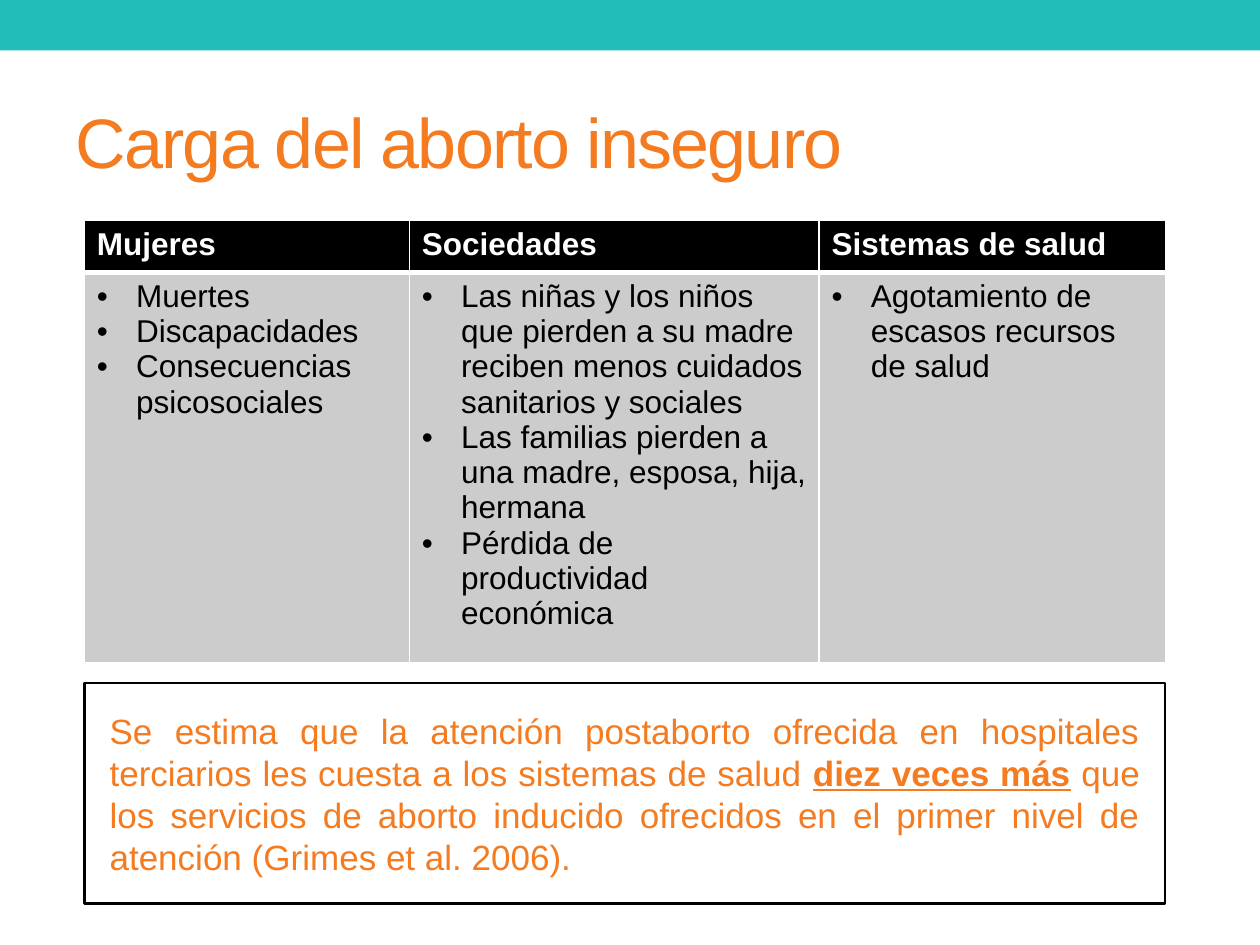
from dataclasses import dataclass

from lxml.etree import SubElement
from pptx import Presentation
from pptx.dml.color import RGBColor
from pptx.enum.shapes import MSO_SHAPE
from pptx.enum.text import MSO_ANCHOR, PP_ALIGN
from pptx.oxml.ns import qn
from pptx.util import Cm, Pt

FONT = "Arial"
TEAL, ORANGE, GREY = "22BCB9", "F47B20", "CCCCCC"
BLACK, WHITE = "000000", "FFFFFF"
LEFT, WIDTH = Cm(1.7), Cm(21.79)
HEAD, BODY = Cm(1.04), Cm(7.37)


@dataclass
class Column:
    width: float
    head: str
    items: list[str]


COLUMNS = [
    Column(6.55, "Mujeres",
           ["Muertes", "Discapacidades", "Consecuencias psicosociales"]),
    Column(8.26, "Sociedades", [
        "Las niñas y los niños que pierden a su madre reciben menos "
        "cuidados sanitarios y sociales",
        "Las familias pierden a una madre, esposa, hija, hermana",
        "Pérdida de productividad económica",
    ]),
    Column(6.98, "Sistemas de salud",
           ["Agotamiento de escasos recursos de salud"]),
]


def tint(code: str) -> RGBColor:
    return RGBColor.from_string(code)


def style(run, size: float, color: str, bold: bool = False) -> None:
    font = run.font
    font.name, font.size, font.bold = FONT, Pt(size), bold
    font.color.rgb = tint(color)


def bullet(para) -> None:
    props = para._p.get_or_add_pPr()
    props.set("marL", str(Cm(0.79)))
    props.set("indent", str(-Cm(0.79)))
    SubElement(props, qn("a:buFont"), typeface=FONT)
    SubElement(props, qn("a:buChar"), char="•")


def border(cell, top: float, bottom: float) -> None:
    props = cell._tc.get_or_add_tcPr()
    for side, width in (("L", 1), ("R", 1), ("T", top), ("B", bottom)):
        line = SubElement(props, qn(f"a:ln{side}"), w=str(Pt(width)))
        SubElement(SubElement(line, qn("a:solidFill")),
                   qn("a:srgbClr"), val=WHITE)


def fill_cell(cell, lines: list[str], is_head: bool) -> None:
    # Borders go before the fill in the cell properties
    border(cell, 1 if is_head else 3, 3 if is_head else 1)
    cell.fill.solid()
    cell.fill.fore_color.rgb = tint(BLACK if is_head else GREY)
    frame = cell.text_frame
    frame.text = "\n".join(lines)
    for para in frame.paragraphs:
        if not is_head:
            bullet(para)
        for run in para.runs:
            style(run, 18, WHITE if is_head else BLACK, is_head)


def add_rect(slide, left: int, top: int, width: int, height: int):
    rect = slide.shapes.add_shape(MSO_SHAPE.RECTANGLE, left, top, width, height)
    rect.shadow.inherit = False
    return rect


def add_band(slide, width: int) -> None:
    band = add_rect(slide, 0, 0, width, Cm(1.02))
    band.fill.solid()
    band.fill.fore_color.rgb = tint(TEAL)
    band.line.fill.background()


def add_title(slide) -> None:
    box = slide.shapes.add_textbox(Cm(1.27), Cm(1.47), Cm(22.86), Cm(2.74))
    frame = box.text_frame
    frame.word_wrap = True
    frame.vertical_anchor = MSO_ANCHOR.MIDDLE
    frame.text = "Carga del aborto inseguro"
    run = frame.paragraphs[0].runs[0]
    style(run, 40, ORANGE)
    run._r.get_or_add_rPr().set("spc", "-100")


def add_grid(slide) -> None:
    grid = slide.shapes.add_table(2, len(COLUMNS), LEFT, Cm(4.45),
                                  WIDTH, HEAD + BODY).table
    grid.rows[0].height, grid.rows[1].height = HEAD, BODY
    for i, col in enumerate(COLUMNS):
        grid.columns[i].width = Cm(col.width)
        fill_cell(grid.cell(0, i), [col.head], True)
        fill_cell(grid.cell(1, i), col.items, False)


def add_note(slide) -> None:
    note = add_rect(slide, LEFT, Cm(13.77), WIDTH, Cm(4.45))
    note.fill.background()
    note.line.color.rgb = tint(BLACK)
    note.line.width = Pt(1.5)
    frame = note.text_frame
    frame.word_wrap = True
    frame.vertical_anchor = MSO_ANCHOR.MIDDLE
    frame.margin_left = frame.margin_right = Cm(0.51)
    frame.margin_top = frame.margin_bottom = Cm(0.51)
    para = frame.paragraphs[0]
    para.alignment = PP_ALIGN.JUSTIFY
    parts = [
        ("Se estima que la atención postaborto ofrecida en hospitales "
         "terciarios les cuesta a los sistemas de salud ", False),
        ("diez veces más", True),
        (" que los servicios de aborto inducido ofrecidos en el primer "
         "nivel de atención (Grimes et al. 2006).", False),
    ]
    for text, strong in parts:
        run = para.add_run()
        run.text = text
        style(run, 20, ORANGE, strong)
        run.font.underline = strong


def main() -> None:
    deck = Presentation()
    deck.slide_width, deck.slide_height = Cm(25.4), Cm(19.05)
    slide = deck.slides.add_slide(deck.slide_layouts[6])

    # Top band and title
    add_band(slide, deck.slide_width)
    add_title(slide)

    # Table of burdens and framed note
    add_grid(slide)
    add_note(slide)
    deck.save("out.pptx")


if __name__ == "__main__":
    main()
